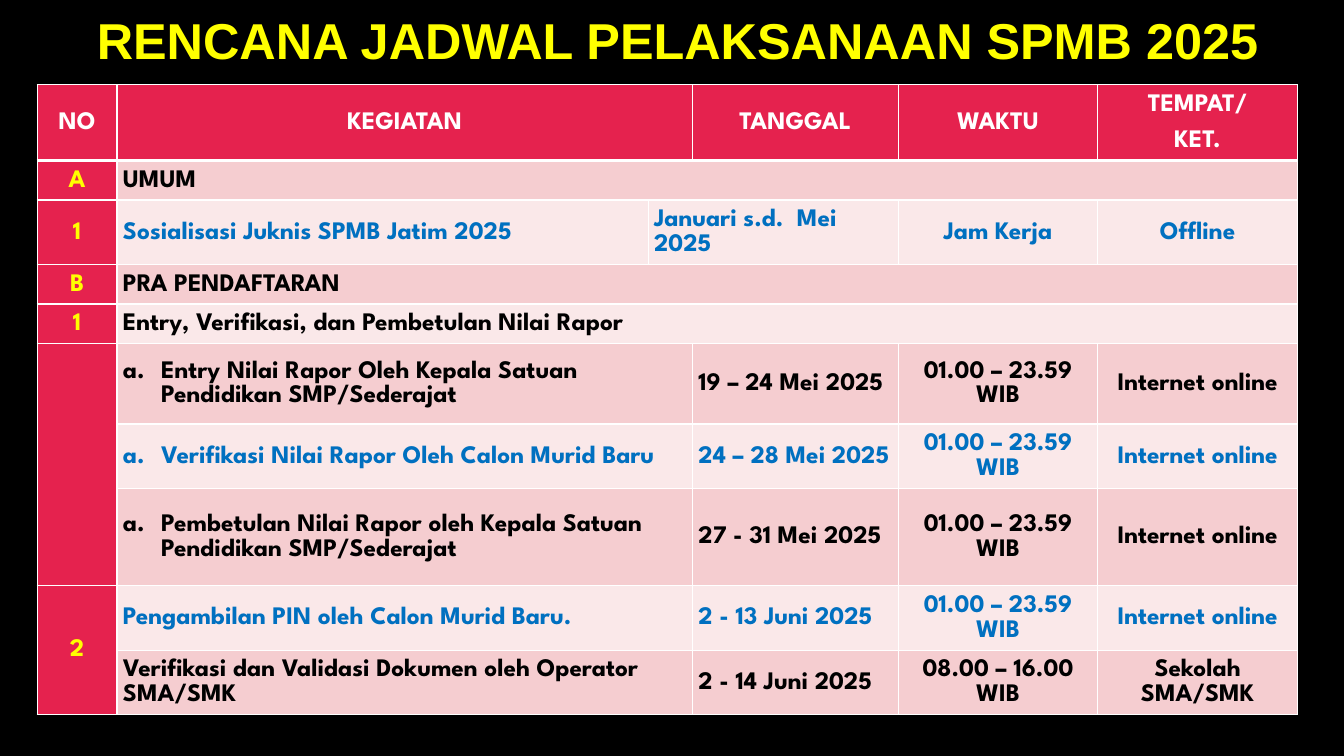
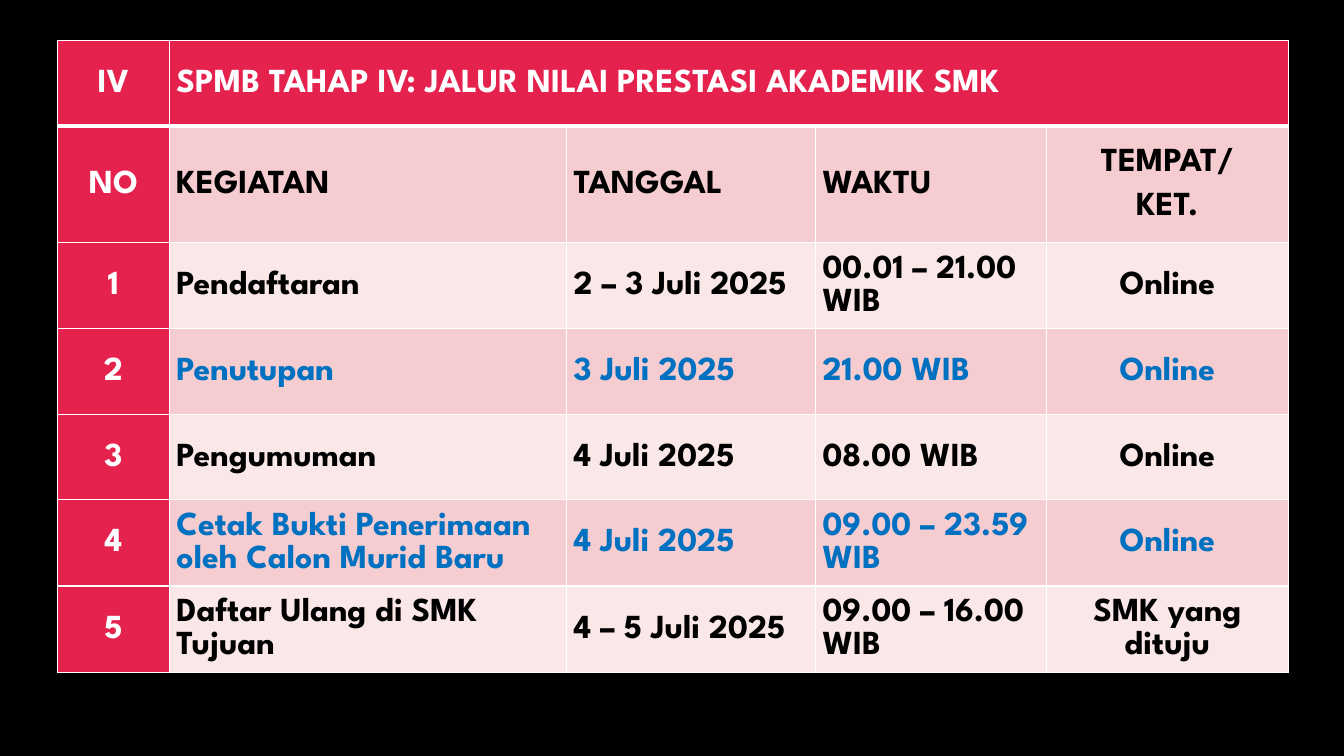
from dataclasses import dataclass

from lxml import etree
from pptx import Presentation
from pptx.dml.color import RGBColor
from pptx.enum.text import MSO_ANCHOR, MSO_AUTO_SIZE, PP_ALIGN
from pptx.oxml.ns import qn
from pptx.util import Pt

LEFT, CENTER = PP_ALIGN.LEFT, PP_ALIGN.CENTER
MIDDLE = MSO_ANCHOR.MIDDLE
FIT_SHAPE = MSO_AUTO_SIZE.SHAPE_TO_FIT_TEXT

BLACK = RGBColor(0x00, 0x00, 0x00)
WHITE = RGBColor(0xFF, 0xFF, 0xFF)
YELLOW = RGBColor(0xFF, 0xFF, 0x00)
BLUE = RGBColor(0x00, 0x70, 0xC0)
CRIMSON = RGBColor(0xE5, 0x22, 0x4E)
PINK = RGBColor(0xF5, 0xCD, 0xD0)
PALE_PINK = RGBColor(0xFA, 0xE8, 0xE9)

TITLE_FONT = "Arial"
TABLE_FONT = "League Spartan"
FIRST_CENTERED_COLUMN = 4
THIN_BORDER, THICK_BORDER = 1, 3
LIST_INDENT = Pt(27.3)


@dataclass(frozen=True)
class Cell:
    text: str
    columns: int = 1
    lettered: bool = False


@dataclass(frozen=True)
class Row:
    height: float
    number: str
    cells: tuple[Cell, ...]
    color: RGBColor = BLACK
    number_rows: int = 1
    centered: bool = False


@dataclass(frozen=True)
class Schedule:
    left: float
    top: float
    widths: tuple[float, ...]
    rows: tuple[Row, ...]
    font_size: float
    margin: float
    number_color: RGBColor


def activity(text: str, date: str, time: str, place: str, lettered: bool = False) -> tuple[Cell, ...]:
    return Cell(text, 2, lettered), Cell(date), Cell(time), Cell(place)


def plain(*texts: str) -> tuple[Cell, ...]:
    return tuple(Cell(text) for text in texts)


DAY = "01.00 – 23.59 WIB"
ONLINE = "Internet online"

GENERAL = Schedule(
    26.6, 60.5, (57, 379.4, 31.7, 147, 142.6, 142.6),
    (
        Row(39.6, "NO", activity("KEGIATAN", "TANGGAL", "WAKTU", "TEMPAT/\nKET."), WHITE, centered=True),
        Row(28.1, "A", (Cell("UMUM", 5),)),
        Row(28.1, "1", (
            Cell("Sosialisasi Juknis SPMB Jatim 2025"), Cell("Januari s.d.  Mei 2025", 2),
            Cell("Jam Kerja"), Cell("Offline"),
        ), BLUE),
        Row(28.1, "B", (Cell("PRA PENDAFTARAN", 5),)),
        Row(28.1, "1", (Cell("Entry, Verifikasi, dan Pembetulan Nilai Rapor", 5),)),
        Row(57.6, "", activity(
            "Entry Nilai Rapor Oleh Kepala Satuan Pendidikan SMP/Sederajat",
            "19 – 24 Mei 2025", DAY, ONLINE, True), number_rows=3),
        Row(46.1, "", activity(
            "Verifikasi Nilai Rapor Oleh Calon Murid Baru",
            "24 – 28 Mei 2025", DAY, ONLINE, True), BLUE, number_rows=0),
        Row(69.1, "", activity(
            "Pembetulan Nilai Rapor oleh Kepala Satuan Pendidikan SMP/Sederajat",
            "27 - 31 Mei 2025", DAY, ONLINE, True), number_rows=0),
        Row(34.6, "2", activity(
            "Pengambilan PIN oleh Calon Murid Baru.",
            "2 - 13 Juni 2025", DAY, ONLINE), BLUE, number_rows=2),
        Row(46.1, "", activity(
            "Verifikasi dan Validasi Dokumen oleh Operator SMA/SMK",
            "2 - 14 Juni 2025", "08.00 – 16.00 WIB", "Sekolah SMA/SMK"), number_rows=0),
    ),
    18, 4.3, YELLOW,
)

STAGE_FOUR = Schedule(
    41, 28.8, (80, 283.7, 177.8, 165, 172.8),
    (
        Row(61, "IV", (Cell("SPMB TAHAP IV: JALUR NILAI PRESTASI AKADEMIK SMK", 4),), WHITE),
        Row(83.5, "NO", plain("KEGIATAN", "TANGGAL", "WAKTU", "TEMPAT/\nKET.")),
        Row(61, "1", plain("Pendaftaran", "2 – 3 Juli 2025", "00.01 – 21.00 WIB", "Online")),
        Row(61, "2", plain("Penutupan", "3 Juli 2025", "21.00 WIB", "Online"), BLUE),
        Row(61, "3", plain("Pengumuman", "4 Juli 2025", "08.00 WIB", "Online")),
        Row(61, "4", plain(
            "Cetak Bukti Penerimaan oleh Calon Murid Baru",
            "4 Juli 2025", "09.00 – 23.59 WIB", "Online"), BLUE),
        Row(61, "5", plain(
            "Daftar Ulang di SMK Tujuan",
            "4 – 5 Juli 2025", "09.00 – 16.00 WIB", "SMK yang dituju")),
    ),
    24, 5.1, WHITE,
)


def add_run(paragraph, text: str, font_name: str, size: float, color: RGBColor) -> None:
    run = paragraph.add_run()
    run.text = text
    run.font.name = font_name
    run.font.size = Pt(size)
    run.font.bold = True
    run.font.color.rgb = color


def space_paragraph(paragraph, alignment: PP_ALIGN) -> None:
    paragraph.alignment = alignment
    paragraph.line_spacing = 1.07
    paragraph.space_after = Pt(8)


def letter_paragraph(paragraph) -> None:
    properties = paragraph._p.get_or_add_pPr()
    properties.set("marL", str(LIST_INDENT))
    properties.set("indent", str(-LIST_INDENT))
    etree.SubElement(properties, qn("a:buFont"), typeface="+mj-lt")
    etree.SubElement(properties, qn("a:buAutoNum"), type="alphaLcPeriod")


def set_borders(cell, top: float, bottom: float) -> None:
    properties = cell._tc.get_or_add_tcPr()
    sides = (("a:lnL", THIN_BORDER), ("a:lnR", THIN_BORDER), ("a:lnT", top), ("a:lnB", bottom))
    for position, (tag, width) in enumerate(sides):
        line = etree.Element(qn(tag), w=str(Pt(width)))
        fill = etree.SubElement(line, qn("a:solidFill"))
        etree.SubElement(fill, qn("a:srgbClr"), val=str(WHITE))
        properties.insert(position, line)


def write_cell(cell, content: Cell, schedule: Schedule, color: RGBColor, alignment: PP_ALIGN) -> None:
    frame = cell.text_frame
    for index, text in enumerate(content.text.split("\n")):
        paragraph = frame.add_paragraph() if index else frame.paragraphs[0]
        if content.lettered:
            letter_paragraph(paragraph)
        space_paragraph(paragraph, alignment)
        if text:
            add_run(paragraph, text, TABLE_FONT, schedule.font_size, color)


def style_cell(cell, row_index: int, column_index: int, margin: float) -> None:
    cell.margin_left = cell.margin_right = Pt(margin)
    cell.margin_top = cell.margin_bottom = Pt(0)
    cell.vertical_anchor = MIDDLE
    cell.fill.solid()
    if row_index == 0 or column_index == 0:
        cell.fill.fore_color.rgb = CRIMSON
    else:
        cell.fill.fore_color.rgb = PINK if row_index % 2 else PALE_PINK
    set_borders(
        cell,
        THICK_BORDER if row_index == 1 else THIN_BORDER,
        THICK_BORDER if row_index == 0 else THIN_BORDER,
    )


def add_schedule(slide, schedule: Schedule) -> None:
    table = slide.shapes.add_table(
        len(schedule.rows), len(schedule.widths), Pt(schedule.left), Pt(schedule.top),
        Pt(sum(schedule.widths)), Pt(sum(row.height for row in schedule.rows)),
    ).table
    table.horz_banding = False
    for column, width in zip(table.columns, schedule.widths):
        column.width = Pt(width)

    for row_index, row in enumerate(schedule.rows):
        table.rows[row_index].height = Pt(row.height)
        for column_index in range(len(schedule.widths)):
            style_cell(table.cell(row_index, column_index), row_index, column_index, schedule.margin)

        if row.number_rows:
            number_cell = table.cell(row_index, 0)
            if row.number_rows > 1:
                number_cell.merge(table.cell(row_index + row.number_rows - 1, 0))
            number_color = schedule.number_color if row_index else WHITE
            write_cell(number_cell, Cell(row.number), schedule, number_color, CENTER)

        column_index = 1
        for content in row.cells:
            cell = table.cell(row_index, column_index)
            if content.columns > 1:
                cell.merge(table.cell(row_index, column_index + content.columns - 1))
            centered = row.centered or column_index >= FIRST_CENTERED_COLUMN
            write_cell(cell, content, schedule, row.color, CENTER if centered else LEFT)
            column_index += content.columns


def add_title(slide, text: str) -> None:
    frame = slide.shapes.add_textbox(Pt(35.3), Pt(0), Pt(883.4), Pt(50.4)).text_frame
    frame.word_wrap = True
    frame.auto_size = FIT_SHAPE
    paragraph = frame.paragraphs[0]
    paragraph._p.get_or_add_pPr().set("marL", str(Pt(14.4)))
    space_paragraph(paragraph, CENTER)
    add_run(paragraph, text, TITLE_FONT, 36, YELLOW)


def add_black_slide(presentation):
    slide = presentation.slides.add_slide(presentation.slide_layouts[6])
    slide.background.fill.solid()
    slide.background.fill.fore_color.rgb = BLACK
    return slide


def main() -> None:
    presentation = Presentation()
    presentation.slide_width, presentation.slide_height = Pt(960), Pt(540)

    general_slide = add_black_slide(presentation)
    add_title(general_slide, "RENCANA JADWAL PELAKSANAAN SPMB 2025")
    add_schedule(general_slide, GENERAL)

    add_schedule(add_black_slide(presentation), STAGE_FOUR)
    presentation.save("out.pptx")


if __name__ == "__main__":
    main()
